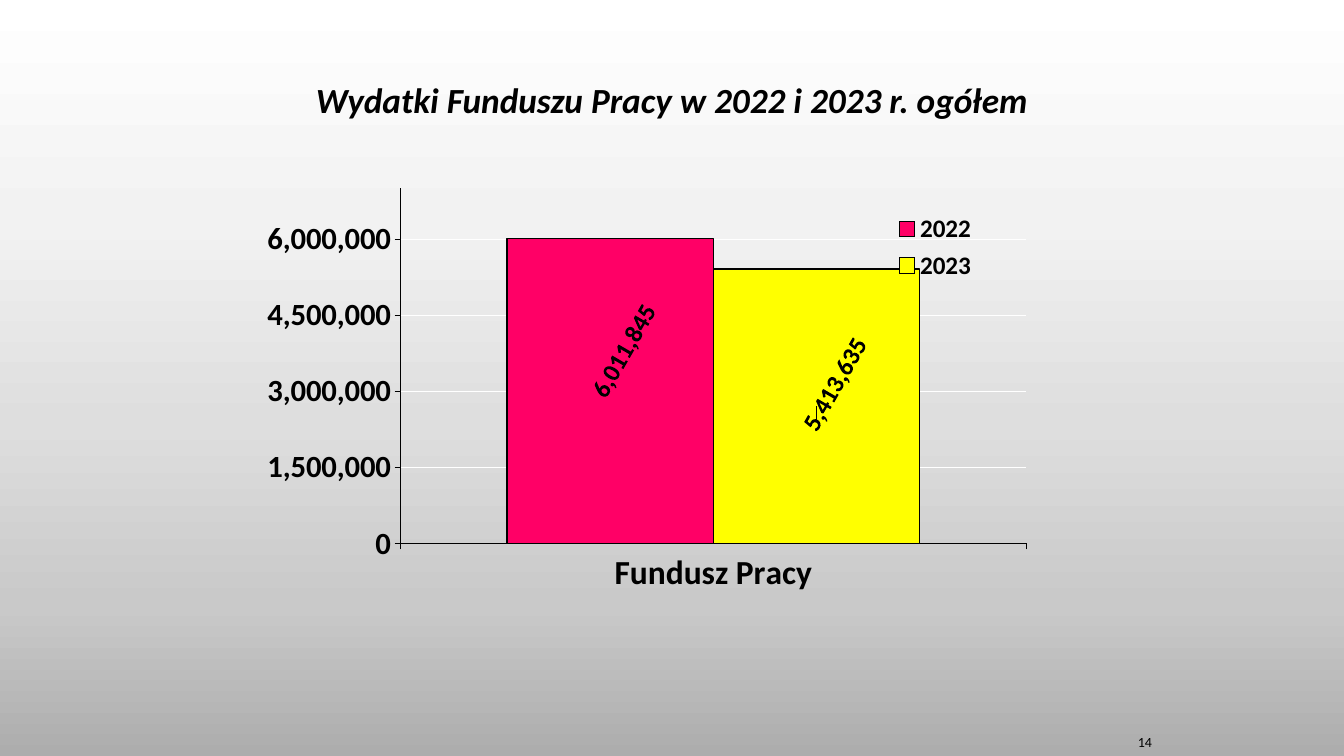
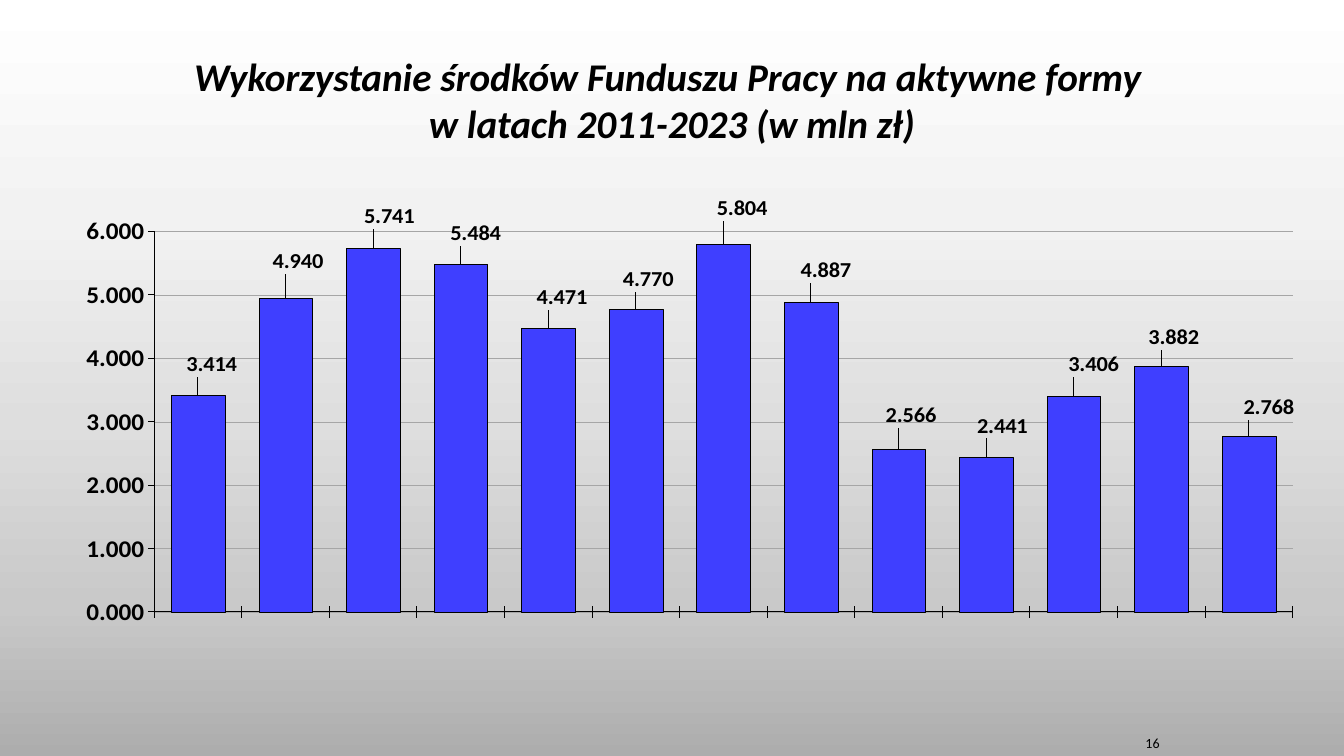
"""Build two slides with column charts on Labour Fund spending."""
from pptx import Presentation
from pptx.chart.data import CategoryChartData
from pptx.dml.color import RGBColor
from pptx.enum.chart import XL_CHART_TYPE, XL_LABEL_POSITION, XL_TICK_LABEL_POSITION, XL_TICK_MARK
from pptx.enum.text import MSO_ANCHOR, MSO_AUTO_SIZE, PP_ALIGN
from pptx.oxml import parse_xml
from pptx.oxml.ns import nsdecls, qn
from pptx.util import Pt

COLUMNS = XL_CHART_TYPE.COLUMN_CLUSTERED
CENTER, OUTSIDE = XL_LABEL_POSITION.CENTER, XL_LABEL_POSITION.OUTSIDE_END
LOW, NO_LABELS = XL_TICK_LABEL_POSITION.LOW, XL_TICK_LABEL_POSITION.NONE
TICK_OUT, TICK_CROSS = XL_TICK_MARK.OUTSIDE, XL_TICK_MARK.CROSS
ALIGN, MIDDLE, BOTTOM = PP_ALIGN.CENTER, MSO_ANCHOR.MIDDLE, MSO_ANCHOR.BOTTOM
FONT, BLACK = "Calibri", "000000"
BACKGROUND = [(0, "FFFFFF"), (29, "F2F2F2"), (56, "DEDEDE"), (80, "C9C9C9"), (100, "ADADAD")]

SLIDES = [
    dict(
        title=["Wydatki Funduszu Pracy w 2022 i 2023 r. ogółem"], title_size=25.2,
        title_box=(217.5, 43, 525, 55.5), page="14", page_box=(798, 515.5, 39.5, 24),
        chart_box=(191, 122.5, 542, 317.5), plot=(0.184, 0.038, 0.827, 0.799),
        cats=["Fundusz Pracy"], fmt="#,##0", gap=103, legend=(0.82, 0.08, 0.12, 0.18),
        series=[("2022", [6011845], "FF0066", [(10, -29)]),
                ("2023", [5413635], "FFFF00", [(13, -16)])],
        bar_line=1, label_size=18, label_pos=CENTER, label_turn=-60,
        cat_size=24, cat_labels=LOW, cat_tick=TICK_OUT, val_size=22, axis_line=0.25,
        top=7000000, step=1500000, grid="FFFFFF"),
    dict(
        title=["Wykorzystanie środków Funduszu Pracy na aktywne formy ", "w latach 2011-2023 (w mln zł)"],
        title_size=28, title_box=(69, 34, 822, 73.5), page="16", page_box=(803.5, 516, 39.5, 24),
        chart_box=(34.5, 139.5, 890, 329), plot=(0.085, 0.03, 0.914, 0.87),
        cats=[str(year) for year in range(2011, 2024)], fmt="0.000", gap=63, legend=None,
        series=[("Series 1",
                 [3.414, 4.94, 5.741, 5.484, 4.471, 4.77, 5.804, 4.887, 2.566, 2.441, 3.406, 3.882, 2.768],
                 "3F3FFF",
                 [(10, -11), (9, -15), (12, -11), (11, -11), (10, -11), (9, -10), (13, -14),
                  (11, -11), (9, -13), (12, -11), (14, -11), (9, -9), (14, -9)])],
        bar_line=0.2, label_size=16, label_pos=OUTSIDE, label_turn=0,
        cat_size=18, cat_labels=NO_LABELS, cat_tick=TICK_CROSS, val_size=18, axis_line=0.75,
        top=6, step=1, grid="A6A6A6"),
]


def rgb(value):
    return RGBColor.from_string(value)


def set_layout(parent, index, **parts):
    for old in parent.findall(qn("c:layout")):
        parent.remove(old)
    items = "".join(f'<c:{name} val="{value}"/>' for name, value in parts.items())
    parent.insert(index, parse_xml(
        f'<c:layout {nsdecls("c")}><c:manualLayout>{items}</c:manualLayout></c:layout>'))


prs = Presentation()
prs.slide_width, prs.slide_height = Pt(960), Pt(540)
master = prs.slide_master
fill = master.background.fill
fill.gradient()
fill.gradient_angle = 270
stops = master._element.find(".//" + qn("a:gsLst"))
for stop in list(stops):
    stops.remove(stop)
for pos, color in BACKGROUND:
    stops.append(parse_xml(
        f'<a:gs {nsdecls("a")} pos="{pos * 1000}"><a:srgbClr val="{color}"/></a:gs>'))

for d in SLIDES:
    s = prs.slides.add_slide(prs.slide_layouts[5])
    title = s.shapes.title
    title.left, title.top, title.width, title.height = map(Pt, d["title_box"])
    tf = title.text_frame
    tf.auto_size = MSO_AUTO_SIZE.NONE
    tf.vertical_anchor = MIDDLE
    p = tf.paragraphs[0]
    p.alignment = ALIGN
    for i, line in enumerate(d["title"]):
        if i:
            p.add_line_break()
        r = p.add_run()
        r.text = line
        r.font.name, r.font.size = FONT, Pt(d["title_size"])
        r.font.bold = r.font.italic = True
        r.font.color.rgb = rgb(BLACK)
        r._r.get_or_add_rPr().insert(0, parse_xml(
            f'<a:ln {nsdecls("a")} w="3175"><a:solidFill><a:srgbClr val="{BLACK}"/></a:solidFill></a:ln>'))

    tf = s.shapes.add_textbox(*map(Pt, d["page_box"])).text_frame
    tf.word_wrap = True
    tf.vertical_anchor = BOTTOM
    p = tf.paragraphs[0]
    p.alignment = ALIGN
    r = p.add_run()
    r.text = d["page"]
    r.font.name, r.font.size = FONT, Pt(10)
    r.font.color.rgb = rgb(BLACK)

    data = CategoryChartData(number_format=d["fmt"])
    data.categories = d["cats"]
    for name, values, color, offsets in d["series"]:
        data.add_series(name, values)
    chart = s.shapes.add_chart(COLUMNS, *map(Pt, d["chart_box"]), data).chart
    chart.has_title = False
    chart.font.name, chart.font.size, chart.font.bold = FONT, Pt(18), True
    chart.font.color.rgb = rgb(BLACK)
    x, y, w, h = d["plot"]
    set_layout(chart._chartSpace.find(".//" + qn("c:plotArea")), 0,
               layoutTarget="inner", xMode="edge", yMode="edge", x=x, y=y, w=w, h=h)

    chart.has_legend = d["legend"] is not None
    if chart.has_legend:
        legend = chart.legend
        legend.include_in_layout = False
        legend.font.name, legend.font.size, legend.font.bold = FONT, Pt(18), True
        legend.font.color.rgb = rgb(BLACK)
        x, y, w, h = d["legend"]
        set_layout(legend._element, 1, xMode="edge", yMode="edge", x=x, y=y, w=w, h=h)

    cat, val = chart.category_axis, chart.value_axis
    cat.tick_label_position, cat.major_tick_mark = d["cat_labels"], d["cat_tick"]
    val.major_tick_mark = TICK_OUT
    val.minimum_scale, val.maximum_scale, val.major_unit = 0, d["top"], d["step"]
    val.tick_labels.number_format = d["fmt"]
    val.tick_labels.number_format_is_linked = False
    val.has_major_gridlines = True
    grid = val.major_gridlines.format.line
    grid.width, grid.color.rgb = Pt(0.25), rgb(d["grid"])
    for axis, size in ((cat, d["cat_size"]), (val, d["val_size"])):
        font = axis.tick_labels.font
        font.name, font.size, font.bold = FONT, Pt(size), True
        font.color.rgb = rgb(BLACK)
        axis.format.line.width = Pt(d["axis_line"])
        axis.format.line.color.rgb = rgb(BLACK)

    plot = chart.plots[0]
    plot.gap_width, plot.overlap, plot.vary_by_categories = d["gap"], 0, False
    for series, (name, values, color, offsets) in zip(plot.series, d["series"]):
        series.format.fill.solid()
        series.format.fill.fore_color.rgb = rgb(color)
        series.format.line.width = Pt(d["bar_line"])
        series.format.line.color.rgb = rgb(BLACK)
        for i in range(len(values)):
            label = series.points[i].data_label
            label.position = d["label_pos"]
            label.font.name, label.font.size, label.font.bold = FONT, Pt(d["label_size"]), True
            label.font.color.rgb = rgb(BLACK)
        for element, (dx, dy) in zip(series._element.iter(qn("c:dLbl")), offsets):
            element.find(".//" + qn("a:bodyPr")).set("rot", str(d["label_turn"] * 60000))
            set_layout(element, 1, x=round(dx / d["chart_box"][2], 3), y=round(dy / d["chart_box"][3], 3))

prs.save("out.pptx")
